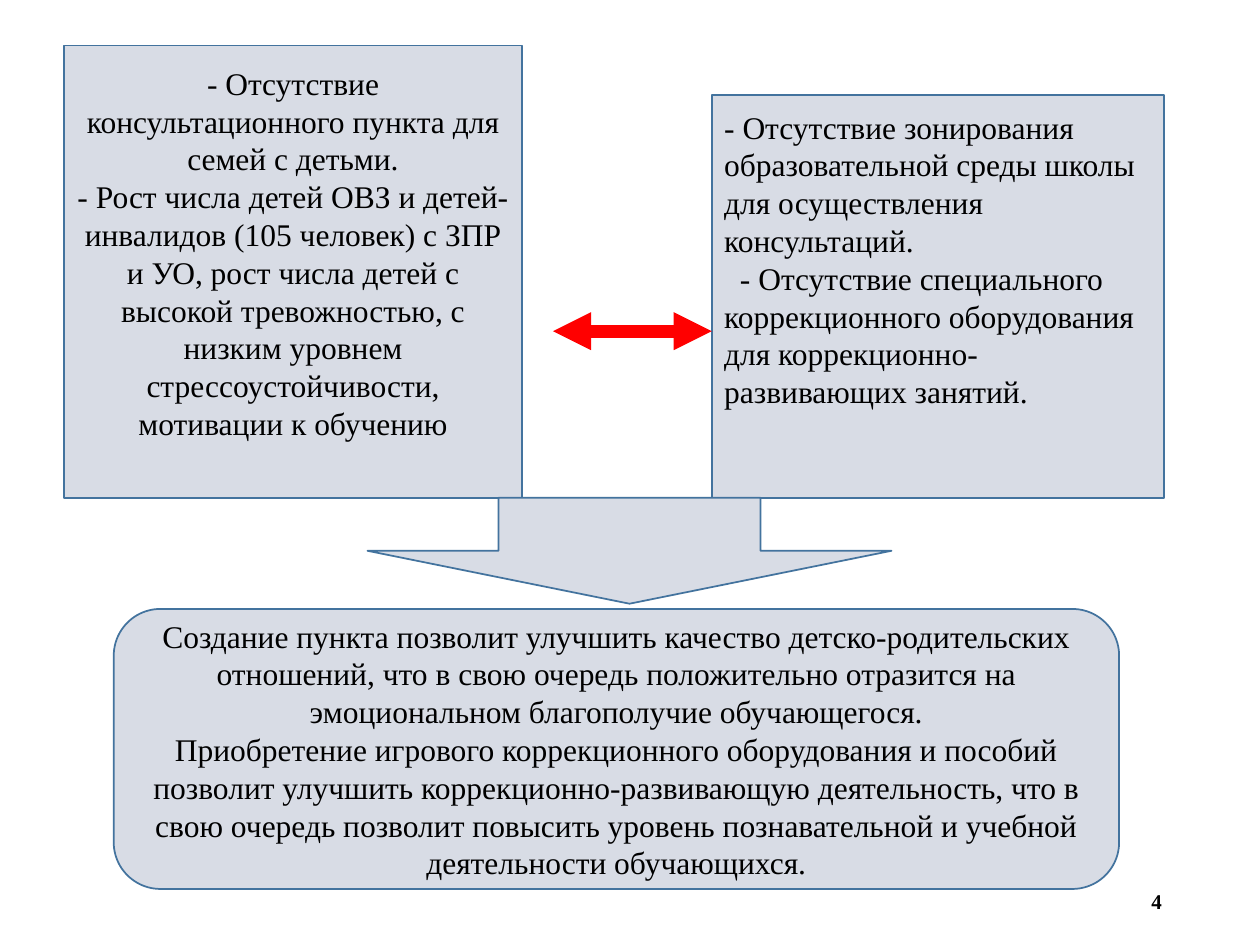
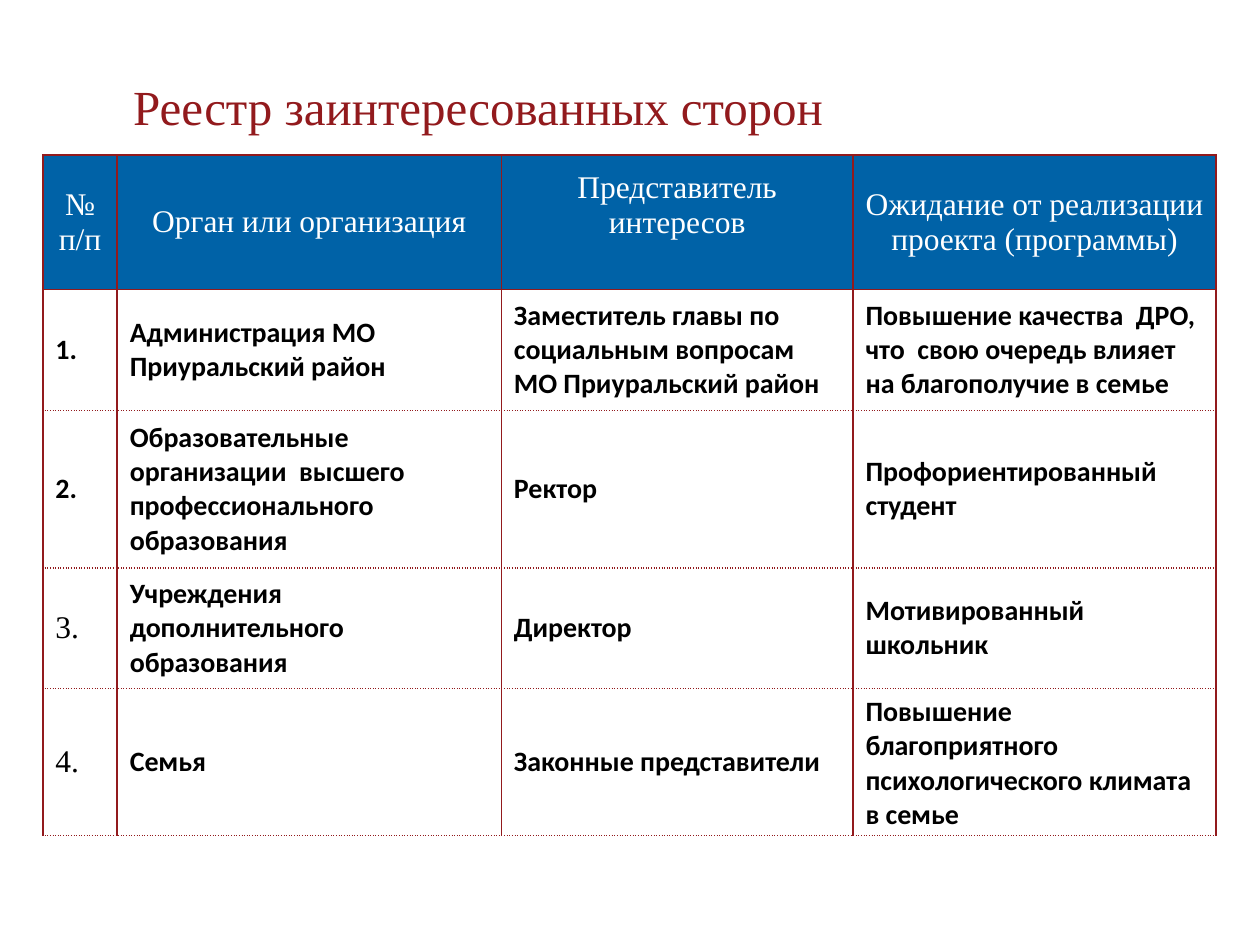
"""Build two slides: the problems that call for a family centre, and the register of stakeholders."""
import pptx
import pptx.dml.color
import pptx.enum.shapes
import pptx.enum.text
import pptx.oxml
import pptx.oxml.ns
import pptx.util
from lxml import etree

Pt = pptx.util.Pt
SHAPE = pptx.enum.shapes.MSO_SHAPE
ALIGN = pptx.enum.text.PP_ALIGN
ANCHOR = pptx.enum.text.MSO_ANCHOR

COLORS = {"panel": "D8DCE5", "outline": "43739E", "arrow": "FF0000", "accent": "921A1D",
          "header": "0062A7", "white": "FFFFFF", "black": "000000"}
SERIF, SANS = "Times New Roman", "Calibri"

FAMILY_PROBLEMS = [
    "- Отсутствие консультационного пункта для семей с детьми.",
    "- Рост числа детей ОВЗ и детей-инвалидов (105 человек) с ЗПР и УО, рост числа детей "
    "с высокой тревожностью, с низким уровнем стрессоустойчивости, мотивации к обучению",
]
SCHOOL_PROBLEMS = [
    "- Отсутствие зонирования образовательной среды школы для осуществления консультаций.",
    "- Отсутствие специального коррекционного оборудования для коррекционно-развивающих занятий.",
]
OUTCOMES = [
    "Создание пункта позволит улучшить качество детско-родительских отношений, что в свою "
    "очередь положительно отразится на эмоциональном благополучие обучающегося.",
    "Приобретение игрового коррекционного оборудования и пособий позволит улучшить "
    "коррекционно-развивающую деятельность, что в свою очередь позволит повысить уровень "
    "познавательной и учебной деятельности обучающихся.",
]
PAGE_NUMBER = "4"

REGISTER_TITLE = "Реестр заинтересованных сторон"
REGISTER_HEADER = [["№", "п/п"], ["Орган или организация"], ["Представитель интересов"],
                   ["Ожидание от реализации проекта (программы)"]]
STAKEHOLDERS = [
    ("Администрация МО Приуральский район",
     "Заместитель главы по социальным вопросам МО Приуральский район",
     "Повышение качества  ДРО, что  свою очередь влияет на благополучие в семье"),
    ("Образовательные организации  высшего профессионального образования",
     "Ректор", "Профориентированный студент"),
    ("Учреждения дополнительного образования", "Директор", "Мотивированный школьник"),
    ("Семья", "Законные представители",
     "Повышение благоприятного психологического климата в семье"),
]
COLUMN_WIDTHS = [42.5, 219.5, 201, 207.5]
ROW_HEIGHTS = [77, 69, 90, 69, 69]


def rgb(name):
    return pptx.dml.color.RGBColor.from_string(COLORS[name])


def write(frame, lines, color="black", size=18, font=SERIF, bold=False, align=ALIGN.LEFT,
          anchor=ANCHOR.MIDDLE, spacing=None):
    frame.word_wrap = True
    frame.vertical_anchor = anchor
    for index, line in enumerate(lines):
        para = frame.paragraphs[0] if index == 0 else frame.add_paragraph()
        para.text = line
        para.alignment = align
        para.line_spacing = spacing
        para.font.name, para.font.size, para.font.bold = font, Pt(size), bold
        para.font.color.rgb = rgb(color)


def add_text(page, place, lines, **style):
    box = page.shapes.add_textbox(*map(Pt, place))
    write(box.text_frame, lines, **style)


def add_panel(page, kind, place, lines=(), inset=3.6, **style):
    panel = page.shapes.add_shape(kind, *map(Pt, place))
    panel.shadow.inherit = False
    panel.fill.solid()
    panel.fill.fore_color.rgb = rgb("panel")
    panel.line.color.rgb = rgb("outline")
    panel.line.width = Pt(1)
    panel.text_frame.margin_top = Pt(inset)
    write(panel.text_frame, lines, **style)
    return panel


def add_double_arrow(page, left, right, y):
    arrow = page.shapes.add_connector(pptx.enum.shapes.MSO_CONNECTOR.STRAIGHT,
                                      Pt(left), Pt(y), Pt(right), Pt(y))
    arrow.line.color.rgb = rgb("arrow")
    arrow.line.width = Pt(7.25)
    line = arrow.line._get_or_add_ln()
    for end in ("a:headEnd", "a:tailEnd"):
        etree.SubElement(line, pptx.oxml.ns.qn(end), type="triangle")
    etree.SubElement(arrow._element.spPr, pptx.oxml.ns.qn("a:effectLst"))


def style_cell(cell, fill, dashes):
    properties = cell._tc.get_or_add_tcPr()
    for side, dash in zip("LRTB", dashes):
        properties.append(pptx.oxml.parse_xml(
            f'<a:ln{side} {pptx.oxml.ns.nsdecls("a")} w="12700"><a:solidFill>'
            f'<a:srgbClr val="{COLORS["accent"]}"/></a:solidFill>'
            f'<a:prstDash val="{dash}"/></a:ln{side}>'))
    cell.fill.solid()
    cell.fill.fore_color.rgb = rgb(fill)
    cell.vertical_anchor = ANCHOR.MIDDLE


def build_problems(page):
    add_text(page, (509, 500.5, 162, 28.5), [PAGE_NUMBER], size=12, bold=True, align=ALIGN.RIGHT)
    add_panel(page, SHAPE.RECTANGLE, (36.75, 26, 261.5, 258.5), FAMILY_PROBLEMS, inset=10.5,
              align=ALIGN.CENTER, anchor=ANCHOR.TOP)
    school = add_panel(page, SHAPE.RECTANGLE, (406.75, 54.5, 258.5, 230), SCHOOL_PROBLEMS,
                       inset=7, anchor=ANCHOR.TOP)
    school.text_frame.paragraphs[1]._p.get_or_add_pPr().set("indent", str(Pt(9)))
    add_double_arrow(page, 316, 406.75, 189.25)
    add_panel(page, SHAPE.ROUNDED_RECTANGLE, (65, 348, 574.5, 160), OUTCOMES, align=ALIGN.CENTER)
    add_panel(page, SHAPE.DOWN_ARROW, (210, 284.5, 299.5, 60.5))


def build_register(page):
    add_text(page, (69, 8.5, 534, 73), [REGISTER_TITLE], color="accent", size=28,
             anchor=ANCHOR.BOTTOM, spacing=0.9)
    rows = [REGISTER_HEADER] + [[[f"{number}."], *([text] for text in texts)]
                                for number, texts in enumerate(STAKEHOLDERS, 1)]
    table = page.shapes.add_table(len(rows), len(COLUMN_WIDTHS), Pt(24.5), Pt(88.5),
                                  Pt(sum(COLUMN_WIDTHS)), Pt(sum(ROW_HEIGHTS))).table
    table.first_row = table.horz_banding = False
    for column, width in zip(table.columns, COLUMN_WIDTHS):
        column.width = Pt(width)
    for row, height in zip(table.rows, ROW_HEIGHTS):
        row.height = Pt(height)
    for r, row in enumerate(rows):
        top = "solid" if r < 2 else "sysDot"
        bottom = "solid" if r == 0 else "sysDot"
        for c, lines in enumerate(row):
            cell = table.cell(r, c)
            style_cell(cell, "white" if r else "header", ("solid", "solid", top, bottom))
            if r == 0:
                write(cell.text_frame, lines, color="white", align=ALIGN.CENTER)
            elif c == 0 and r > 2:
                write(cell.text_frame, lines)
            else:
                write(cell.text_frame, lines, size=16, font=SANS, bold=True)
            cell.vertical_anchor = ANCHOR.MIDDLE
    table.cell(0, 2).margin_bottom = Pt(23)


def main():
    deck = pptx.Presentation()
    deck.slide_width, deck.slide_height = Pt(720), Pt(540)
    for build in (build_problems, build_register):
        build(deck.slides.add_slide(deck.slide_layouts[6]))
    deck.save("out.pptx")


if __name__ == "__main__":
    main()
